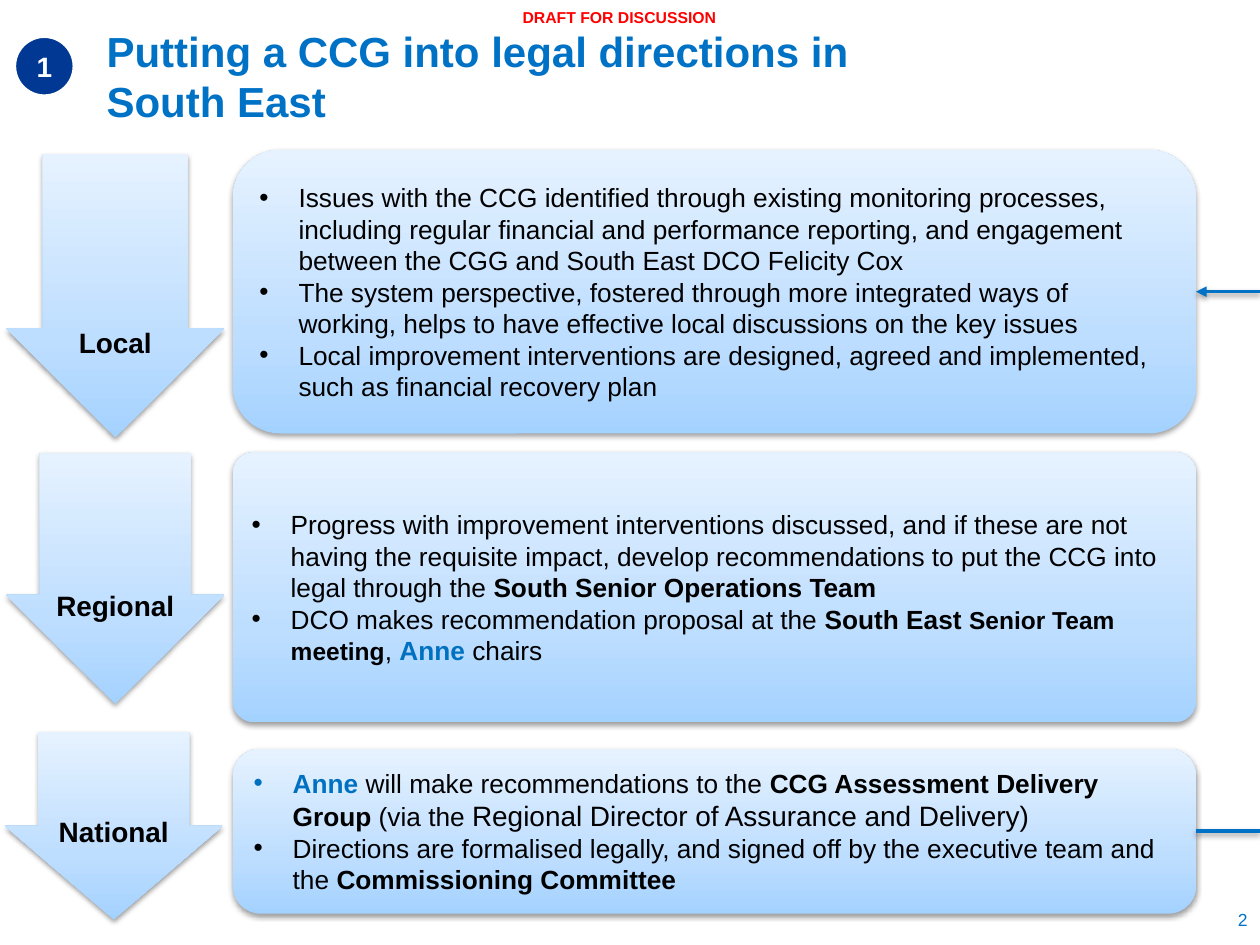
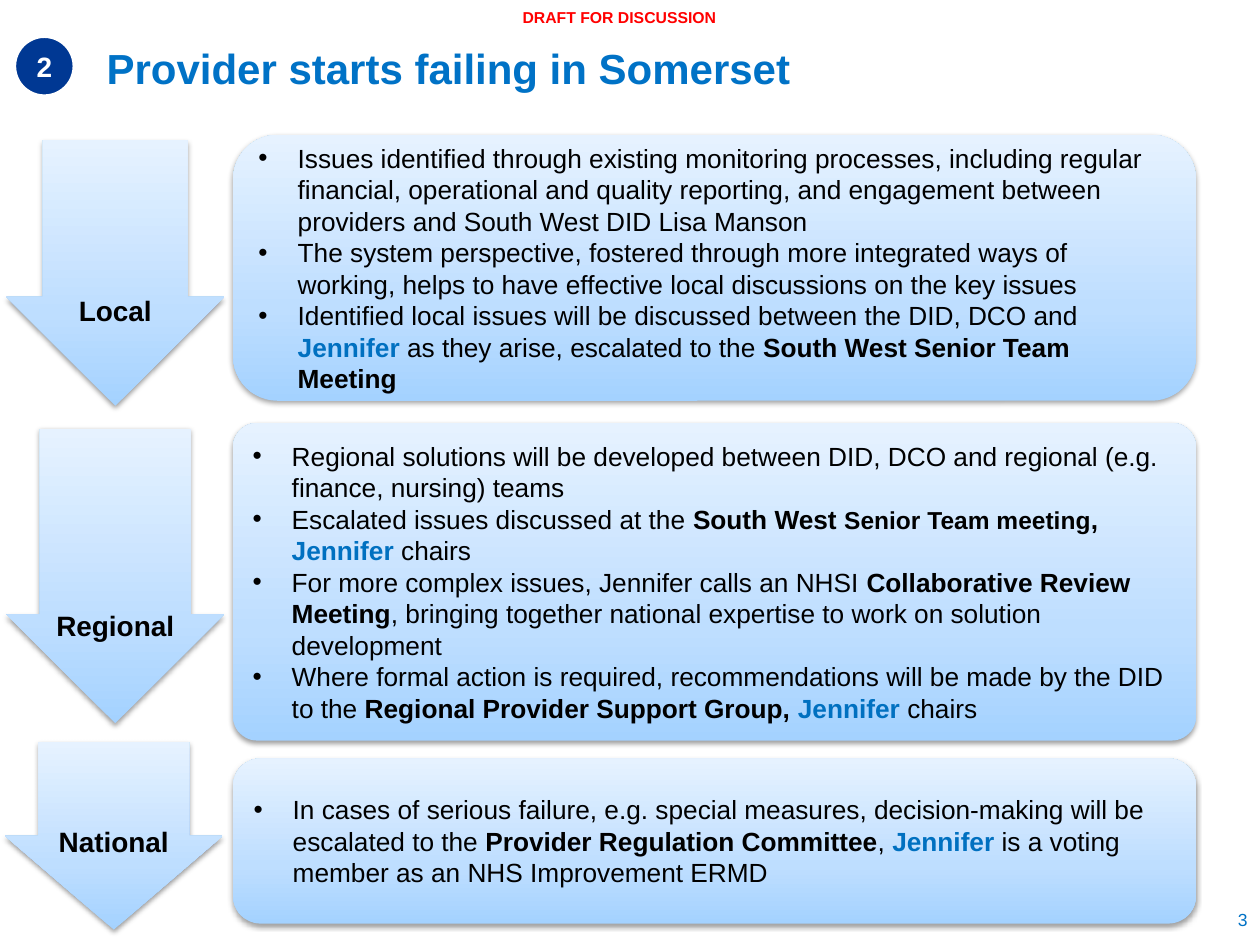
from pptx import Presentation
from pptx.dml.color import RGBColor
from pptx.enum.shapes import MSO_CONNECTOR, MSO_SHAPE
from pptx.enum.text import MSO_ANCHOR, MSO_AUTO_SIZE, PP_ALIGN
from pptx.oxml import parse_xml
from pptx.oxml.ns import nsdecls
from pptx.util import Cm, Pt

OVAL, ROUND, DOWN = MSO_SHAPE.OVAL, MSO_SHAPE.ROUNDED_RECTANGLE, MSO_SHAPE.DOWN_ARROW
LEFT, MID, RIGHT = PP_ALIGN.LEFT, PP_ALIGN.CENTER, PP_ALIGN.RIGHT
TOP, CENTRE, LOW = MSO_ANCHOR.TOP, MSO_ANCHOR.MIDDLE, MSO_ANCHOR.BOTTOM
GROW = MSO_AUTO_SIZE.SHAPE_TO_FIT_TEXT
STRAIGHT = MSO_CONNECTOR.STRAIGHT

COLOURS = {"title": "0072C6", "name": "0070C0", "badge": "003893", "draft": "FF0000",
           "text": "000000", "white": "FFFFFF"}
BLEND = [(0, "A4D2FF"), (35, "BEDEFF"), (100, "E6F2FF")]

# Text formats: size, bold, colour
FORMATS = {
    "plain": (15, False, "text"), "bold": (15, True, "text"), "small": (14, True, "text"),
    "large": (16, False, "text"), "name": (15, True, "name"), "label": (16, True, "text"),
    "badge": (16, True, "white"), "title": (24, True, "title"),
    "draft": (9, True, "draft"), "page": (10, False, "title"),
}

# Content: each level has its box and arrow (top, height) and its bullets;
# a bullet is a list of runs, either plain text or (text, format)
SYSTEM = ["The system perspective, fostered through more integrated ways of working, "
          "helps to have effective local discussions on the key issues"]
SLIDES = [
    {"title": "Putting a CCG into legal directions in South East",
     "spot": (1.9, 0.91, 17.6, 1.24), "linked": (0, 2),
     "levels": [
         ((3.02, 5.72), (3.1, 5.72), [
             ["Issues with the CCG identified through existing monitoring processes, including "
              "regular financial and performance reporting, and engagement between the CGG and "
              "South East DCO Felicity Cox"],
             SYSTEM,
             ["Local improvement interventions are designed, agreed and implemented, such as "
              "financial recovery plan"]]),
         ((9.12, 5.44), (9.14, 5.05), [
             ["Progress with improvement interventions discussed, and if these are not having "
              "the requisite impact, develop recommendations to put the CCG into legal through "
              "the ", ("South Senior Operations Team", "bold")],
             ["DCO makes recommendation proposal at the ", ("South East ", "bold"),
              ("Senior Team meeting", "small"), ", ", ("Anne", "name"), " chairs"]]),
         ((15.09, 3.33), (14.76, 3.78), [
             [("Anne", "name"), " will make recommendations to the ",
              ("CCG Assessment Delivery Group ", "bold"), "(via the ",
              ("Regional Director of Assurance and Delivery)", "large")],
             ["Directions are formalised legally, and signed off by the executive team and the ",
              ("Commissioning Committee", "bold")]]),
     ]},
    {"title": "Provider starts failing in Somerset",
     "spot": (1.9, 0.74, 18.24, 1.24), "linked": (),
     "levels": [
         ((2.72, 5.36), (2.82, 5.36), [
             ["Issues identified through existing monitoring processes, including regular "
              "financial, operational and quality reporting, and engagement between providers "
              "and South West DID Lisa Manson"],
             SYSTEM,
             ["Identified local issues will be discussed between the DID, DCO and ",
              ("Jennifer", "name"), " as they arise, escalated to the ",
              ("South West Senior Team Meeting", "bold")]]),
         ((8.53, 6.4), (8.64, 5.94), [
             ["Regional solutions will be developed between DID, DCO and regional (e.g. finance, "
              "nursing) teams"],
             ["Escalated issues discussed at the ", ("South West ", "bold"),
              ("Senior Team meeting", "small"), (", ", "bold"), ("Jennifer ", "name"), "chairs"],
             ["For more complex issues, Jennifer calls an NHSI ",
              ("Collaborative Review Meeting", "bold"),
              ", bringing together national expertise to work on solution development"],
             ["Where formal action is required, recommendations will be made by the DID to the ",
              ("Regional Provider Support Group, ", "bold"), ("Jennifer ", "name"), "chairs"]]),
         ((15.29, 3.33), (14.96, 3.78), [
             ["In cases of serious failure, e.g. special measures, decision-making will be "
              "escalated to the ", ("Provider Regulation Committee", "bold"), ", ",
              ("Jennifer ", "name"), "is a voting member as an NHS Improvement ERMD"]]),
     ]},
]

# Level name, arrow left, arrow shaft width, box corner
LEVELS = [("Local", 0.13, 0.665, 0.167), ("Regional", 0.13, 0.692, 0.076),
          ("National", 0.1, 0.692, 0.167)]
WIDE, HIGH = 25.4, 19.05
BOX_X, BOX_W, ARROW_W = 4.7, 19.41, 4.39


def rgb(key):
    return RGBColor.from_string(COLOURS[key])


def place(*spot):
    return [Cm(value) for value in spot]


def write(shape, paras, look="plain", align=LEFT, anchor=CENTRE, bullet=False):
    frame = shape.text_frame
    frame.word_wrap, frame.vertical_anchor = True, anchor
    for num, runs in enumerate(paras):
        para = frame.paragraphs[0] if num == 0 else frame.add_paragraph()
        para.alignment = align
        if bullet:
            props = para._p.get_or_add_pPr()
            props.set("marL", str(Cm(0.79)))
            props.set("indent", str(-Cm(0.79)))
            for tag in ('buFont %s typeface="Arial"', 'buChar %s char="•"'):
                props.append(parse_xml(f"<a:{tag % nsdecls('a')}/>"))
        for item in runs:
            text, kind = (item, look) if isinstance(item, str) else item
            run = para.add_run()
            run.text = text
            size, bold, colour = FORMATS[kind]
            for key, value in {"name": "Arial", "size": Pt(size), "bold": bold}.items():
                setattr(run.font, key, value)
            run.font.color.rgb = rgb(colour)
    return frame


def label(slide, spot, text, look, align=LEFT, anchor=CENTRE):
    return write(slide.shapes.add_textbox(*place(*spot)), [[text]], look, align, anchor)


def shade(shape):
    shape._element.spPr.append(parse_xml(
        f'<a:effectLst {nsdecls("a")}><a:outerShdw blurRad="{Pt(3.1)}" dist="{Pt(1.6)}" '
        'dir="5400000" rotWithShape="0"><a:srgbClr val="000000"><a:alpha val="38000"/>'
        '</a:srgbClr></a:outerShdw></a:effectLst>'))


def block(slide, kind, spot, adjust):
    """Shape with the blue blend and a soft shadow."""
    shape = slide.shapes.add_shape(kind, *place(*spot))
    for num, value in enumerate(adjust):
        shape.adjustments[num] = value
    stops = "".join(f'<a:gs pos="{pos * 1000}"><a:srgbClr val="{hue}"/></a:gs>'
                    for pos, hue in BLEND)
    shape._element.spPr.insert(2, parse_xml(
        f'<a:gradFill {nsdecls("a")} rotWithShape="1"><a:gsLst>{stops}</a:gsLst>'
        '<a:lin ang="16200000" scaled="0"/></a:gradFill>'))
    shape.line.fill.background()
    shade(shape)
    return shape


def link(slide, box, head):
    """Line between the slide's right edge and the box."""
    y = box.top + box.height // 2
    line = slide.shapes.add_connector(STRAIGHT, Cm(WIDE), y, box.left + box.width, y)
    line.end_connect(box, 3)
    line.line.color.rgb, line.line.width = rgb("title"), Pt(2)
    if head:
        line.line._get_or_add_ln().append(
            parse_xml(f'<a:tailEnd {nsdecls("a")} type="triangle"/>'))
    shade(line)


def frame_up(slide, num, data):
    """Draft mark, page number, badge and title."""
    draft = label(slide, (10.26, 0.03, 4.45, 0.64), "DRAFT FOR DISCUSSION", "draft", MID, TOP)
    draft.word_wrap, draft.auto_size = False, GROW
    draft.paragraphs[0].space_after = Pt(6)
    label(slide, (19.48, 18.03, 5.92, 1.02), str(num + 1), "page", RIGHT)
    badge = slide.shapes.add_shape(OVAL, *place(0.3, 0.74, 1.19, 1.19))
    badge.shadow.inherit = False
    badge.fill.solid()
    badge.fill.fore_color.rgb = rgb("badge")
    badge.line.color.rgb, badge.line.width = rgb("white"), Pt(1.5)
    inner = write(badge, [[str(num)]], "badge", MID)
    for side in ("left", "top", "right", "bottom"):
        setattr(inner, f"margin_{side}", 0)
    label(slide, data["spot"], data["title"], "title")


def main():
    deck = Presentation()
    deck.slide_width, deck.slide_height = Cm(WIDE), Cm(HIGH)
    for num, data in enumerate(SLIDES, 1):
        slide = deck.slides.add_slide(deck.slide_layouts[6])
        frame_up(slide, num, data)
        # Text boxes
        boxes = []
        for (_, _, _, curve), ((top, high), _, paras) in zip(LEVELS, data["levels"]):
            box = block(slide, ROUND, (BOX_X, top, BOX_W, high), [curve])
            write(box, paras, bullet=True)
            boxes.append(box)
        # Level arrows
        for (name, left, shaft, _), (_, (top, high), _) in zip(LEVELS, data["levels"]):
            arrow = block(slide, DOWN, (left, top, ARROW_W, high), [shaft, 0.5])
            write(arrow, [[name]], "label", MID, LOW)
        # Feedback lines
        for level in data["linked"]:
            link(slide, boxes[level], head=level == 0)
    deck.save("out.pptx")


if __name__ == "__main__":
    main()
